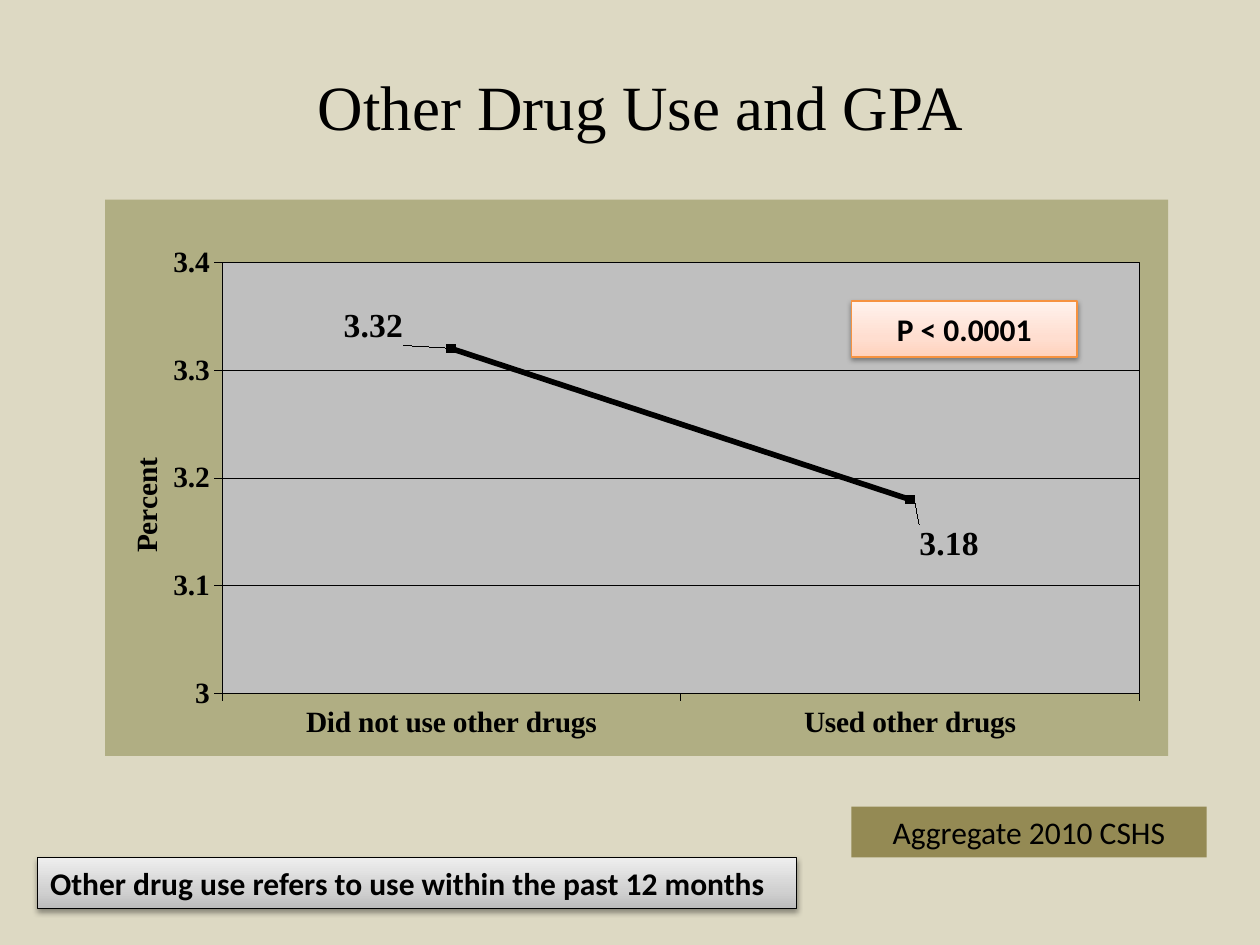
from pptx import Presentation
from pptx.chart import data
from pptx.dml.color import RGBColor
from pptx.enum import chart as ch, shapes, text
from pptx.oxml import parse_xml
from pptx.oxml.ns import nsdecls, qn
from pptx.util import Pt

BLACK = RGBColor(0, 0, 0)
SAND = RGBColor(0xDD, 0xD9, 0xC3)
OLIVE = RGBColor(0x94, 0x8A, 0x54)
ORANGE = RGBColor(0xF6, 0x92, 0x40)
SAGE = RGBColor(0xB0, 0xAE, 0x83)
SILVER = RGBColor(0xBF, 0xBF, 0xBF)
PEACH = [(0, "FFD2BD"), (35, "FFDED0"), (100, "FFF2ED")]
GREY = [(0, "BDBDBD"), (35, "D1D1D1"), (100, "EEEEEE")]
SERIF, SANS = "Times New Roman", "Calibri"

TITLE = ("Other Drug Use and GPA", (42, 6, 648, 108))
CHART = (60, 114, 607.5, 318)
PLOT = (0.11, 0.113, 0.863, 0.775)
CATS = ["Did not use other drugs", "Used other drugs"]
VALS = [3.32, 3.18]
SHIFTS = [(-0.11, -0.04), (0, 0.08)]
AXIS = ("Percent", 0.016, 0.455)
CENTER, LEFT = text.PP_ALIGN.CENTER, text.PP_ALIGN.LEFT
BOXES = [
    ("P < 0.0001", (486.5, 172, 129, 32), PEACH, ORANGE, True, CENTER),
    ("Other drug use refers to use within the past 12 months",
     (21.5, 490, 433.5, 29), GREY, BLACK, True, LEFT),
    ("Aggregate 2010 CSHS", (486.5, 461, 203, 29), OLIVE, None, False, CENTER),
]


def style(font, size, name, bold=False):
    font.size, font.name, font.bold = Pt(size), name, bold
    font.color.rgb = BLACK


def place(shape, box):
    shape.left, shape.top, shape.width, shape.height = map(Pt, box)


def layout(x, y, w=None, h=None):
    modes, sizes = "", ""
    if w:
        modes = '<c:layoutTarget val="inner"/>'
        sizes = f'<c:w val="{w}"/><c:h val="{h}"/>'
    return modes, sizes, x, y


def manual(x, y, w=None, h=None, edge=True):
    inner = '<c:layoutTarget val="inner"/>' if w else ""
    mode = '<c:xMode val="edge"/><c:yMode val="edge"/>' if edge else ""
    size = f'<c:w val="{w}"/><c:h val="{h}"/>' if w else ""
    return parse_xml(
        f'<c:layout {nsdecls("c")}><c:manualLayout>{inner}{mode}'
        f'<c:x val="{x}"/><c:y val="{y}"/>{size}</c:manualLayout></c:layout>')


def area(color, line):
    return parse_xml(
        f'<c:spPr {nsdecls("c", "a")}><a:solidFill><a:srgbClr val="{color}"/>'
        f'</a:solidFill><a:ln w="{Pt(0.3)}">{line}</a:ln></c:spPr>')


def shade(shape, stops):
    shape.fill.gradient()
    grad = shape._element.spPr.find(qn("a:gradFill"))
    parts = "".join(f'<a:gs pos="{pos * 1000}"><a:srgbClr val="{color}"/></a:gs>'
                    for pos, color in stops)
    new = parse_xml(
        f'<a:gradFill {nsdecls("a")} rotWithShape="1"><a:gsLst>{parts}</a:gsLst>'
        '<a:lin ang="16200000" scaled="1"/></a:gradFill>')
    grad.getparent().replace(grad, new)
    shape._element.spPr.find(qn("a:effectLst")).append(parse_xml(
        f'<a:outerShdw {nsdecls("a")} blurRad="40000" dist="20000" dir="5400000" '
        'rotWithShape="0"><a:srgbClr val="000000"><a:alpha val="38000"/>'
        '</a:srgbClr></a:outerShdw>'))


def add_box(slide, words, box, fill, line, bold, align):
    shape = slide.shapes.add_shape(shapes.MSO_SHAPE.RECTANGLE, *map(Pt, box))
    shape.shadow.inherit = False
    if line is None:
        shape.line.fill.background()
    else:
        shape.line.color.rgb = line
        shape.line.width = Pt(0.75)
    if isinstance(fill, list):
        shade(shape, fill)
    else:
        shape.fill.solid()
        shape.fill.fore_color.rgb = fill
    frame = shape.text_frame
    frame.text = words
    frame.word_wrap = True
    frame.vertical_anchor = text.MSO_ANCHOR.MIDDLE
    para = frame.paragraphs[0]
    para.alignment = align
    style(para.runs[0].font, 18, SANS, bold)


def add_chart(slide):
    source = data.CategoryChartData()
    source.categories = CATS
    source.add_series("Series 1", VALS)
    chart = slide.shapes.add_chart(
        ch.XL_CHART_TYPE.LINE_MARKERS, *map(Pt, CHART), source).chart
    chart.has_legend = chart.has_title = False
    style(chart.font, 21.6, SERIF, True)

    space = chart._chartSpace
    space.chart.addnext(area(SAGE, "<a:noFill/>"))
    plot = space.chart.plotArea
    for old in plot.findall(qn("c:layout")):
        plot.remove(old)
    plot.insert(0, manual(*PLOT))
    plot.append(area(
        SILVER, f'<a:solidFill><a:srgbClr val="{BLACK}"/></a:solidFill>'))

    cat, val = chart.category_axis, chart.value_axis
    cat.tick_label_position = ch.XL_TICK_LABEL_POSITION.LOW
    val.minimum_scale, val.maximum_scale, val.major_unit = 3, 3.4, 0.1
    val.has_major_gridlines = True
    for axis in (cat, val):
        axis.major_tick_mark = ch.XL_TICK_MARK.OUTSIDE
        axis.minor_tick_mark = ch.XL_TICK_MARK.NONE
        style(axis.tick_labels.font, 16.8, SERIF, True)
    for line in (cat.format.line, val.format.line, val.major_gridlines.format.line):
        line.color.rgb = BLACK
        line.width = Pt(0.3)

    name, x, y = AXIS
    title = val.axis_title
    title.text_frame.text = name
    style(title.text_frame.paragraphs[0].runs[0].font, 16.8, SERIF, True)
    title.text_frame._txBody.find(qn("a:bodyPr")).set("rot", "-5400000")
    for old in title._element.findall(qn("c:layout")):
        title._element.remove(old)
    title._element.find(qn("c:tx")).addnext(manual(x, y))

    chart.plots[0].vary_by_categories = False
    series = chart.plots[0].series[0]
    series.smooth = False
    series.format.line.color.rgb = BLACK
    series.format.line.width = Pt(3.2)
    mark = series.marker
    mark.style, mark.size = ch.XL_MARKER_STYLE.SQUARE, 5
    mark.format.fill.solid()
    mark.format.fill.fore_color.rgb = BLACK
    mark.format.line.color.rgb = BLACK
    series.data_labels.show_value = True
    style(series.data_labels.font, 19.2, SERIF, True)
    for i, shift in enumerate(SHIFTS):
        label = series.points[i].data_label
        style(label.font, 19.2, SERIF, True)
        label.position = ch.XL_LABEL_POSITION.RIGHT
        node = series.data_labels._element.findall(qn("c:dLbl"))[i]
        node.find(qn("c:idx")).addnext(manual(*shift, edge=False))


def main():
    deck = Presentation()
    deck.slide_width, deck.slide_height = Pt(720), Pt(540)
    slide = deck.slides.add_slide(deck.slide_layouts[5])
    slide.background.fill.solid()
    slide.background.fill.fore_color.rgb = SAND
    words, box = TITLE
    head = slide.shapes.title
    place(head, box)
    head.text_frame.text = words
    head.text_frame.vertical_anchor = text.MSO_ANCHOR.MIDDLE
    para = head.text_frame.paragraphs[0]
    para.alignment = CENTER
    style(para.runs[0].font, 36, SERIF)
    add_chart(slide)
    for item in BOXES:
        add_box(slide, *item)
    deck.save("out.pptx")


if __name__ == "__main__":
    main()
